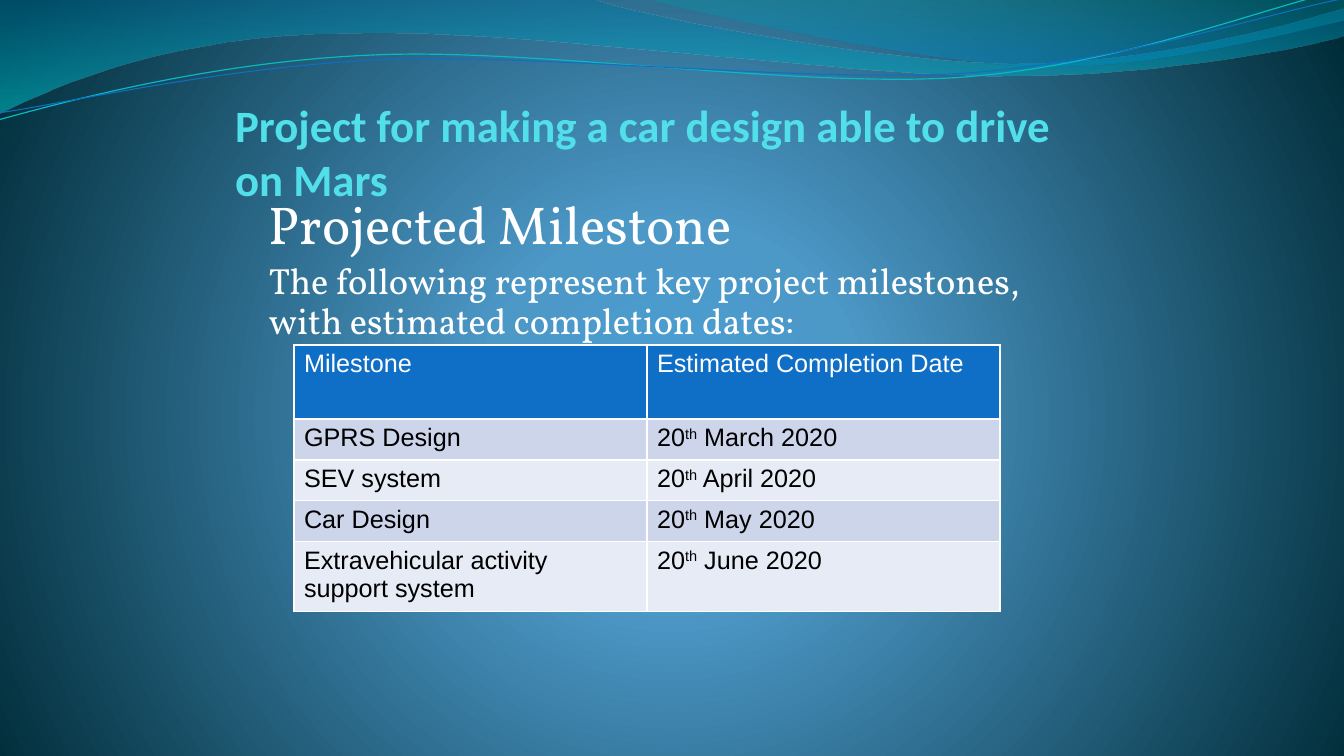
import pptx
import pptx.dml.color
import pptx.enum.text
import pptx.oxml
import pptx.oxml.ns
import pptx.util

PX = 12192000 / 1344
WHITE, BLACK, BLUE, CYAN = "FFFFFF", "000000", "0F6FC6", "51E0EA"
BANDS = ["CCD5EA", "E7EBF5"]
DOWNWARD = '<a:lin ang="5400000" scaled="0"/>'
RADIAL = '<a:path path="circle"><a:fillToRect l="10000" t="110000" r="10000" b="100000"/></a:path>'


def px(length):
    return pptx.util.Emu(round(length * PX))


def color(value):
    return pptx.dml.color.RGBColor.from_string(value)


def xml(tag, content, attributes=""):
    namespace = pptx.oxml.ns.nsdecls("a")
    return pptx.oxml.parse_xml(f"<a:{tag} {namespace} {attributes}>{content}</a:{tag}>")


def gradient(stops, direction):
    marks = "".join(
        f'<a:gs pos="{position * 1000}"><a:srgbClr val="{value}">'
        f'<a:alpha val="{opacity * 1000}"/></a:srgbClr></a:gs>'
        for position, value, opacity in stops
    )
    return xml("gradFill", f"<a:gsLst>{marks}</a:gsLst>{direction}", 'rotWithShape="1"')


class MarsSlide:
    def __init__(self, deck):
        self.slide = deck.slides.add_slide(deck.slide_layouts[6])

    def replace_fill(self, fill, parent, stops, direction):
        fill.solid()
        solid = parent.find(".//" + pptx.oxml.ns.qn("a:solidFill"))
        solid.getparent().replace(solid, gradient(stops, direction))

    def backdrop(self, stops):
        self.replace_fill(self.slide.background.fill, self.slide.element, stops, RADIAL)

    def wave(self, start, segments, closed):
        ends = [start] + [segment[-2:] for segment in segments]
        builder = self.slide.shapes.build_freeform(*start, scale=PX)
        builder.add_line_segments(ends[1:], close=closed)
        wave = builder.convert_to_shape()
        wave.shadow.inherit = False
        left, top = (min(values) for values in zip(*ends))
        straights = list(wave.element.iter(pptx.oxml.ns.qn("a:lnTo")))
        for straight, segment in zip(straights, segments):
            if len(segment) == 6:
                points = "".join(
                    f'<a:pt x="{x - left}" y="{y - top}"/>'
                    for x, y in zip(segment[::2], segment[1::2])
                )
                straight.getparent().replace(straight, xml("cubicBezTo", points))
        return wave

    def ribbon(self, start, segments, stops):
        ribbon = self.wave(start, segments, True)
        ribbon.line.fill.background()
        self.replace_fill(ribbon.fill, ribbon.element.spPr, stops, DOWNWARD)

    def strand(self, start, segments, line_color, width):
        strand = self.wave(start, segments, False)
        strand.rotation = -2.7
        strand.fill.background()
        strand.line.color.rgb = color(line_color)
        strand.line.width = pptx.util.Pt(width)

    def style(self, font, face, size, text_color, bold=False):
        font.name, font.size, font.bold = face, pptx.util.Pt(size), bold
        font.color.rgb = color(text_color)

    def text(self, box, lines, face, text_color, anchor, inset=0, bold=False, spacing=None, before=0):
        frame = self.slide.shapes.add_textbox(*map(px, box)).text_frame
        frame.word_wrap = True
        frame.vertical_anchor = anchor
        frame.margin_left, frame.margin_right = 0, px(2)
        frame.margin_top = frame.margin_bottom = px(inset)
        frame.text = "\n".join(wording for wording, size in lines)
        for index, (paragraph, (wording, size)) in enumerate(zip(frame.paragraphs, lines)):
            paragraph.line_spacing = spacing
            paragraph.space_before = pptx.util.Pt(before if index else 0)
            self.style(paragraph.runs[0].font, face, size, text_color, bold)

    def cell(self, cell, wording, fill, text_color):
        paragraph = cell.text_frame.paragraphs[0]
        for index, part in enumerate(wording.split("^")):
            run = paragraph.add_run()
            run.text = part
            self.style(run.font, "Arial", 18, text_color)
            if index == 1:
                run.font._element.set("baseline", "30000")
        cell.fill.solid()
        cell.fill.fore_color.rgb = color(fill)

    def table(self, left, top, column_width, heights, rows):
        columns = len(rows[0])
        box = (left, top, column_width * columns, sum(heights))
        table = self.slide.shapes.add_table(len(rows), columns, *map(px, box)).table
        for column in table.columns:
            column.width = px(column_width)
        for index, (height, row) in enumerate(zip(heights, rows)):
            table.rows[index].height = px(height)
            fill = BANDS[(index - 1) % 2] if index else BLUE
            for column, wording in enumerate(row):
                self.cell(table.cell(index, column), wording, fill, BLACK if index else WHITE)


def main():
    deck = pptx.Presentation()
    deck.slide_width, deck.slide_height = px(1344), px(756)
    mars = MarsSlide(deck)
    mars.backdrop([(0, "4AA0D6", 100), (25, "4C98C7", 100), (100, "002C38", 100)])
    mars.ribbon((0, -1), [
        (592, -1), (639, 17, 892, 64, 1019, 64), (1147, 64, 1288, 26, 1344, 9), (1346, 36),
        (1322, 44, 1169, 77, 1002, 76), (836, 76, 513, 28, 346, 34), (173, 35, 61, 84, -1, 114),
    ], [(0, "0074A1", 45), (100, "00C6CF", 55)])
    mars.ribbon((644, -1), [
        (684, 11, 916, 62, 1033, 66), (1150, 70, 1292, 32, 1344, 21), (1344, 0),
    ], [(0, "00A1A9", 30), (80, "008BBF", 45)])
    mars.strand((-3, 88), [
        (64, 73, 213, 40, 373, 41), (532, 41, 794, 94, 957, 91), (1118, 87, 1264, 36, 1344, 22),
    ], "0AB8BF", 0.85)
    mars.strand((-2, 81), [
        (63, 75, 220, 46, 381, 46), (541, 47, 801, 89, 962, 87), (1123, 83, 1266, 42, 1347, 30),
    ], BLUE, 0.75)

    anchors = pptx.enum.text.MSO_ANCHOR
    mars.text((235, 42, 857, 163), [("Project for making a car design able to drive on Mars", 32)],
              "Calibri", CYAN, anchors.BOTTOM, bold=True)
    mars.text((269, 194, 789, 269), [
        ("Projected Milestone", 38),
        ("The following represent key project milestones, with estimated completion dates:", 26),
    ], "Vollkorn", WHITE, anchors.TOP, inset=5, spacing=0.9, before=5)
    mars.table(294, 345, 353, [74, 41, 40, 41, 70], [
        ("Milestone", "Estimated Completion Date"),
        ("GPRS Design", "20^th^ March 2020"),
        ("SEV system", "20^th^ April 2020"),
        ("Car Design", "20^th^ May 2020"),
        ("Extravehicular activity support system", "20^th^ June 2020"),
    ])
    deck.save("out.pptx")


if __name__ == "__main__":
    main()
